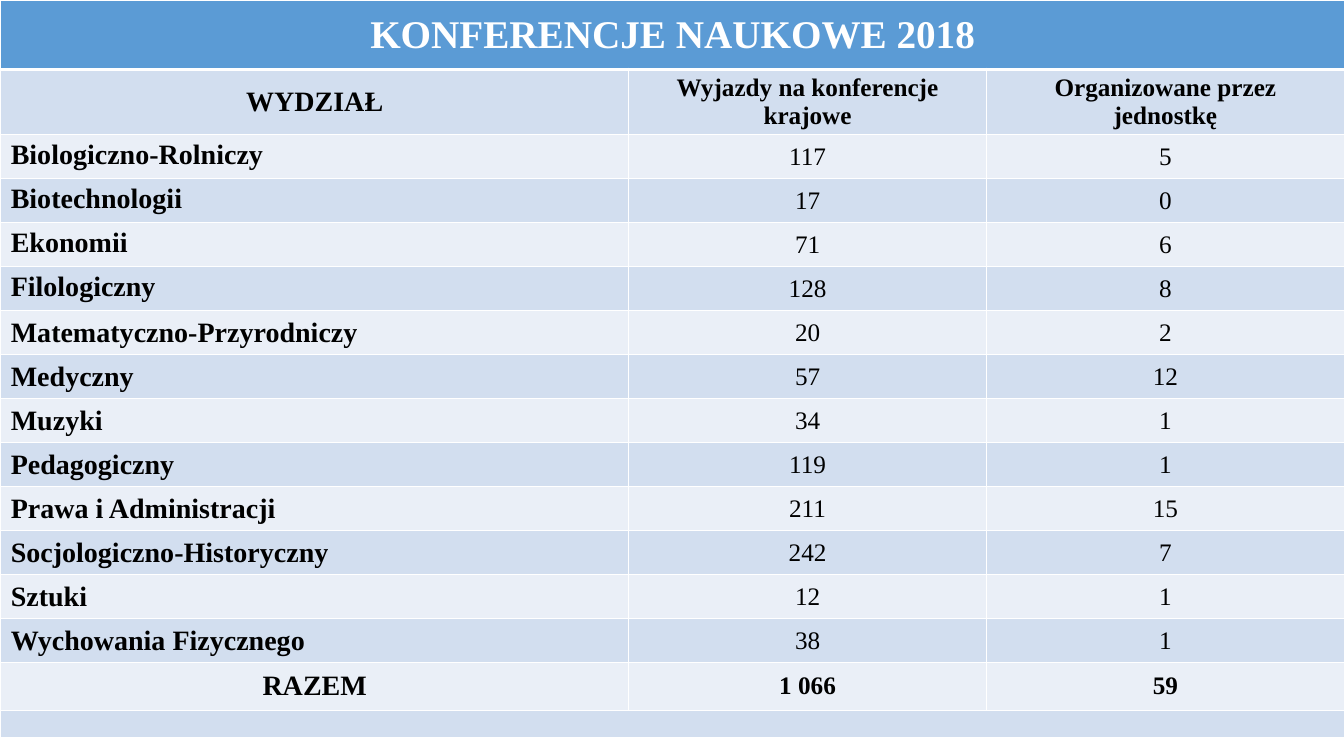
from dataclasses import dataclass
from typing import Any

from lxml.etree import SubElement
from pptx import Presentation
from pptx.dml.color import RGBColor
from pptx.enum.text import MSO_ANCHOR, PP_ALIGN
from pptx.oxml.ns import qn
from pptx.util import Pt


@dataclass(frozen=True)
class Theme:
    face: str = "Times New Roman"
    head: str = "5B9BD5"
    dark: str = "D2DEEF"
    light: str = "EAEFF7"
    white: str = "FFFFFF"
    black: str = "000000"
    title: float = 28
    label: float = 20
    value: float = 18
    blank: float = 9
    thin: float = 1
    thick: float = 3


THEME = Theme()


@dataclass(frozen=True)
class Item:
    text: str
    size: float = THEME.value
    bold: bool = True
    color: str = THEME.black
    align: Any = PP_ALIGN.CENTER
    anchor: Any = MSO_ANCHOR.MIDDLE


@dataclass(frozen=True)
class Row:
    items: list[Item]
    height: float
    fill: str


# Faculty, trips to national conferences, conferences organised
UNITS = [
    ("Biologiczno-Rolniczy", 117, 5),
    ("Biotechnologii", 17, 0),
    ("Ekonomii", 71, 6),
    ("Filologiczny", 128, 8),
    ("Matematyczno-Przyrodniczy", 20, 2),
    ("Medyczny", 57, 12),
    ("Muzyki", 34, 1),
    ("Pedagogiczny", 119, 1),
    ("Prawa i Administracji", 211, 15),
    ("Socjologiczno-Historyczny", 242, 7),
    ("Sztuki", 12, 1),
    ("Wychowania Fizycznego", 38, 1),
]
HIGH = 4  # the first faculty names sit at the top of their cells
WIDTHS = [448.56, 255.6, 255.6]


def make_rows() -> list[Row]:
    rows = [
        Row([Item("KONFERENCJE NAUKOWE 2018", THEME.title, color=THEME.white)],
            49.7, THEME.head),
        Row([Item("WYDZIAŁ", THEME.label),
             Item("Wyjazdy na konferencje krajowe"),
             Item("Organizowane przez\vjednostkę")], 46.4, THEME.dark),
    ]
    for i, (name, trips, own) in enumerate(UNITS):
        anchor = MSO_ANCHOR.TOP if i < HIGH else MSO_ANCHOR.MIDDLE
        label = Item(name, THEME.label, align=PP_ALIGN.LEFT, anchor=anchor)
        nums = [Item(str(n), bold=False) for n in (trips, own)]
        rows.append(Row([label, *nums], 31.45, (THEME.light, THEME.dark)[i % 2]))
    rows.append(Row([Item("RAZEM", THEME.label), Item("1 066"), Item("59")],
                    34, THEME.light))
    rows.append(Row([], 19.4, THEME.dark))
    return rows


def add_edges(cell: Any, top: float, base: float) -> None:
    props = cell._tc.get_or_add_tcPr()
    edges = {"L": THEME.thin, "R": THEME.thin, "T": top, "B": base}
    for side, width in edges.items():
        line = SubElement(props, qn(f"a:ln{side}"), w=str(int(Pt(width))))
        fill = SubElement(line, qn("a:solidFill"))
        SubElement(fill, qn("a:srgbClr"), val=THEME.white)


def write(cell: Any, item: Item) -> None:
    cell.vertical_anchor = item.anchor
    para = cell.text_frame.paragraphs[0]
    para.text = item.text
    para.alignment = item.align
    style = {"name": THEME.face, "size": Pt(item.size), "bold": item.bold}
    for run in para.runs:
        for key, value in style.items():
            setattr(run.font, key, value)
        run.font.color.rgb = RGBColor.from_string(item.color)


def draw_row(table: Any, i: int, row: Row) -> None:
    table.rows[i].height = Pt(row.height)
    for j in range(len(WIDTHS)):
        cell = table.cell(i, j)
        # A heavier rule parts the title from the rest
        add_edges(cell, THEME.thick if i == 1 else THEME.thin,
                  THEME.thick if i == 0 else THEME.thin)
        cell.fill.solid()
        cell.fill.fore_color.rgb = RGBColor.from_string(row.fill)
        cell.margin_top = cell.margin_bottom = Pt(2.2 if i == 1 else 3.6)
        if j < len(row.items):
            write(cell, row.items[j])
        else:
            # Small type keeps blank cells from stretching the row
            para = cell.text_frame.paragraphs[0]
            SubElement(para._p, qn("a:endParaRPr"), sz=str(int(THEME.blank * 100)))
    if len(row.items) < len(WIDTHS):
        table.cell(i, 0).merge(table.cell(i, len(WIDTHS) - 1))


def main() -> None:
    deck = Presentation()
    deck.slide_width, deck.slide_height = Pt(960), Pt(540)
    slide = deck.slides.add_slide(deck.slide_layouts[6])

    # Conference table
    rows = make_rows()
    frame = slide.shapes.add_table(
        len(rows), len(WIDTHS), Pt(0.5), Pt(0),
        Pt(sum(WIDTHS)), Pt(sum(row.height for row in rows)))
    table = frame.table
    table.first_row = table.horz_banding = False
    for col, width in zip(table.columns, WIDTHS):
        col.width = Pt(width)
    for i, row in enumerate(rows):
        draw_row(table, i, row)
    deck.save("out.pptx")


if __name__ == "__main__":
    main()
